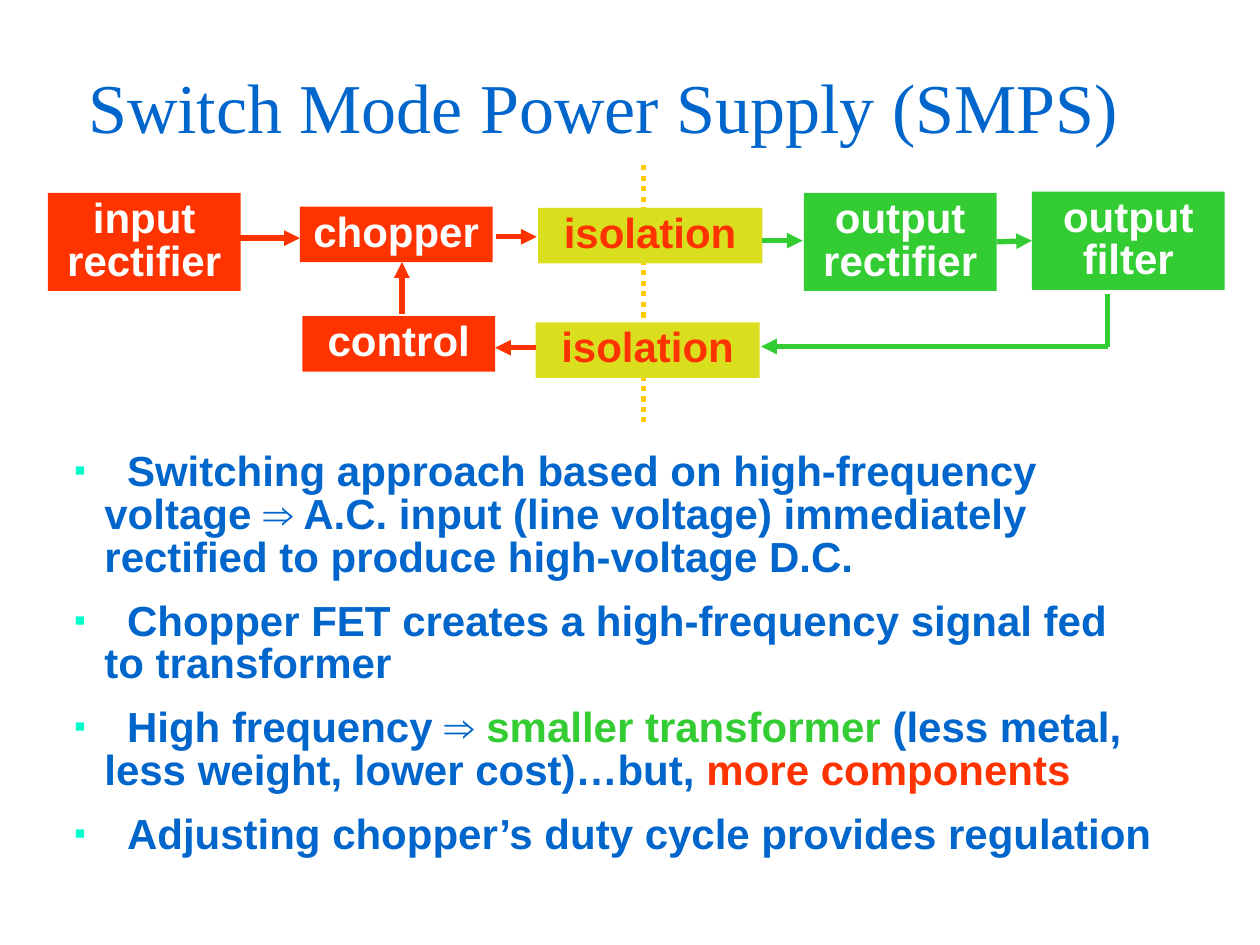
from dataclasses import dataclass

from pptx import Presentation
from pptx.dml.color import RGBColor
from pptx.enum import dml, shapes, text
from pptx.oxml.ns import qn
from pptx.util import Inches, Pt
from lxml import etree


@dataclass(frozen=True)
class Theme:
    blue: str = "0066CC"
    red: str = "FF3300"
    green: str = "33CC33"
    olive: str = "D9DE1E"
    amber: str = "FFCC00"
    bullet: str = "00FFCC"
    white: str = "FFFFFF"
    title_font: str = "Times New Roman"
    body_font: str = "Arial"
    title_size: int = 40
    body_size: int = 24
    line_width: int = 3
    line_spacing: float = 0.85


THEME = Theme()
BOX_W = 1.53
ISOLATION_W = 1.78
ONE_LINE, TWO_LINES = 0.44, 0.78

# Label, left, top, width, height, fill, text colour
BLOCKS = {
    "input": ("input rectifier", 0.38, 1.53, BOX_W, TWO_LINES, THEME.red, THEME.white),
    "chopper": ("chopper", 2.38, 1.64, BOX_W, ONE_LINE, THEME.red, THEME.white),
    "forward": ("isolation", 4.27, 1.65, ISOLATION_W, ONE_LINE, THEME.olive, THEME.red),
    "output": ("output rectifier", 6.38, 1.53, BOX_W, TWO_LINES, THEME.green, THEME.white),
    "filter": ("output filter", 8.19, 1.52, BOX_W, TWO_LINES, THEME.green, THEME.white),
    "feedback": ("isolation", 4.25, 2.56, ISOLATION_W, ONE_LINE, THEME.olive, THEME.red),
    "control": ("control", 2.4, 2.51, BOX_W, ONE_LINE, THEME.red, THEME.white),
}

# Start, end, colour, arrowhead at the end
SIGNALS = [
    ((1.88, 1.89), (2.38, 1.89), THEME.red, True),
    ((3.94, 1.88), (4.26, 1.88), THEME.red, True),
    ((6.05, 1.91), (6.37, 1.91), THEME.green, True),
    ((8.79, 2.33), (8.79, 2.75), THEME.green, False),
    ((8.79, 2.75), (6.04, 2.75), THEME.green, True),
    ((4.25, 2.76), (3.93, 2.76), THEME.red, True),
    ((3.19, 2.49), (3.19, 2.08), THEME.red, True),
]

# Each point is a list of (words, colour)
POINTS = [
    [("Switching approach based on high-frequency voltage ⇒ A.C. input "
      "(line voltage) immediately rectified to produce high-voltage D.C.", THEME.blue)],
    [("Chopper FET creates a high-frequency signal fed to transformer", THEME.blue)],
    [("High frequency ⇒ ", THEME.blue),
     ("smaller transformer", THEME.green),
     (" (less metal, less weight, lower cost)…but, ", THEME.blue),
     ("more components", THEME.red)],
    [("Adjusting chopper’s duty cycle provides regulation", THEME.blue)],
]


def rgb(value):
    return RGBColor.from_string(value)


def style_body(paragraph):
    paragraph.line_spacing = THEME.line_spacing
    paragraph.font.name = THEME.body_font
    paragraph.font.size = Pt(THEME.body_size)
    paragraph.font.bold = True


def add_title(slide, words):
    title = slide.shapes.title
    title.left, title.top = Inches(0.6), Inches(0.21)
    title.width, title.height = Inches(9.06), Inches(1.25)
    frame = title.text_frame
    frame.text = words
    frame.vertical_anchor = text.MSO_ANCHOR.MIDDLE
    paragraph = frame.paragraphs[0]
    paragraph.alignment = text.PP_ALIGN.LEFT
    paragraph.font.name = THEME.title_font
    paragraph.font.size = Pt(THEME.title_size)
    paragraph.font.color.rgb = rgb(THEME.blue)


def add_block(slide, label, left, top, width, height, fill, colour):
    block = slide.shapes.add_shape(shapes.MSO_SHAPE.RECTANGLE, Inches(left),
                                   Inches(top), Inches(width), Inches(height))
    block.shadow.inherit = False
    block.fill.solid()
    block.fill.fore_color.rgb = rgb(fill)
    block.line.fill.background()
    frame = block.text_frame
    frame.text = label
    frame.word_wrap = True
    frame.vertical_anchor = text.MSO_ANCHOR.TOP
    paragraph = frame.paragraphs[0]
    paragraph.alignment = text.PP_ALIGN.CENTER
    style_body(paragraph)
    paragraph.font.color.rgb = rgb(colour)
    return block


def add_line(slide, start, end, colour, arrow=False):
    line = slide.shapes.add_connector(shapes.MSO_CONNECTOR.STRAIGHT,
                                      *map(Inches, start + end))
    line.line.width = Pt(THEME.line_width)
    line.line.color.rgb = rgb(colour)
    if arrow:
        etree.SubElement(line.line._get_or_add_ln(), qn("a:tailEnd"), type="triangle")
    etree.SubElement(line._element.spPr, qn("a:effectLst"))
    return line


def add_bullet(paragraph):
    props = paragraph._p.get_or_add_pPr()
    hanging = Inches(0.24)
    props.set("marL", str(hanging))
    props.set("indent", str(-hanging))
    colour = etree.SubElement(props, qn("a:buClr"))
    etree.SubElement(colour, qn("a:srgbClr"), val=THEME.bullet)
    etree.SubElement(props, qn("a:buSzPct"), val="80000")
    etree.SubElement(props, qn("a:buFont"), typeface=THEME.body_font)
    etree.SubElement(props, qn("a:buChar"), char="▪")
    # The first line starts further in than the lines that follow
    stops = etree.SubElement(props, qn("a:tabLst"))
    etree.SubElement(stops, qn("a:tab"), pos=str(Inches(0.42)), algn="l")


def add_points(slide, points):
    box = slide.shapes.add_textbox(Inches(0.49), Inches(3.54), Inches(8.75), Inches(3.42))
    frame = box.text_frame
    frame.word_wrap = True
    for index, point in enumerate(points):
        paragraph = frame.add_paragraph() if index else frame.paragraphs[0]
        paragraph.space_before = Pt(THEME.body_size / 2)
        add_bullet(paragraph)
        style_body(paragraph)
        for position, (words, colour) in enumerate(point):
            run = paragraph.add_run()
            run.text = words if position else "\t" + words
            run.font.color.rgb = rgb(colour)


def main():
    deck = Presentation()
    deck.slide_width, deck.slide_height = Inches(10), Inches(7.5)
    slide = deck.slides.add_slide(deck.slide_layouts[5])

    # Isolation barrier, behind the blocks
    barrier = add_line(slide, (5.11, 1.31), (5.11, 3.35), THEME.amber)
    barrier.line.dash_style = dml.MSO_LINE.ROUND_DOT

    add_title(slide, "Switch Mode Power Supply (SMPS)")
    add_points(slide, POINTS)

    # Block diagram
    blocks = {key: add_block(slide, *block) for key, block in BLOCKS.items()}
    for signal in SIGNALS:
        add_line(slide, *signal)
    to_filter = add_line(slide, (7.91, 1.91), (8.19, 1.91), THEME.green, True)
    to_filter.begin_connect(blocks["output"], 3)
    to_filter.end_connect(blocks["filter"], 1)

    deck.save("out.pptx")


if __name__ == "__main__":
    main()
